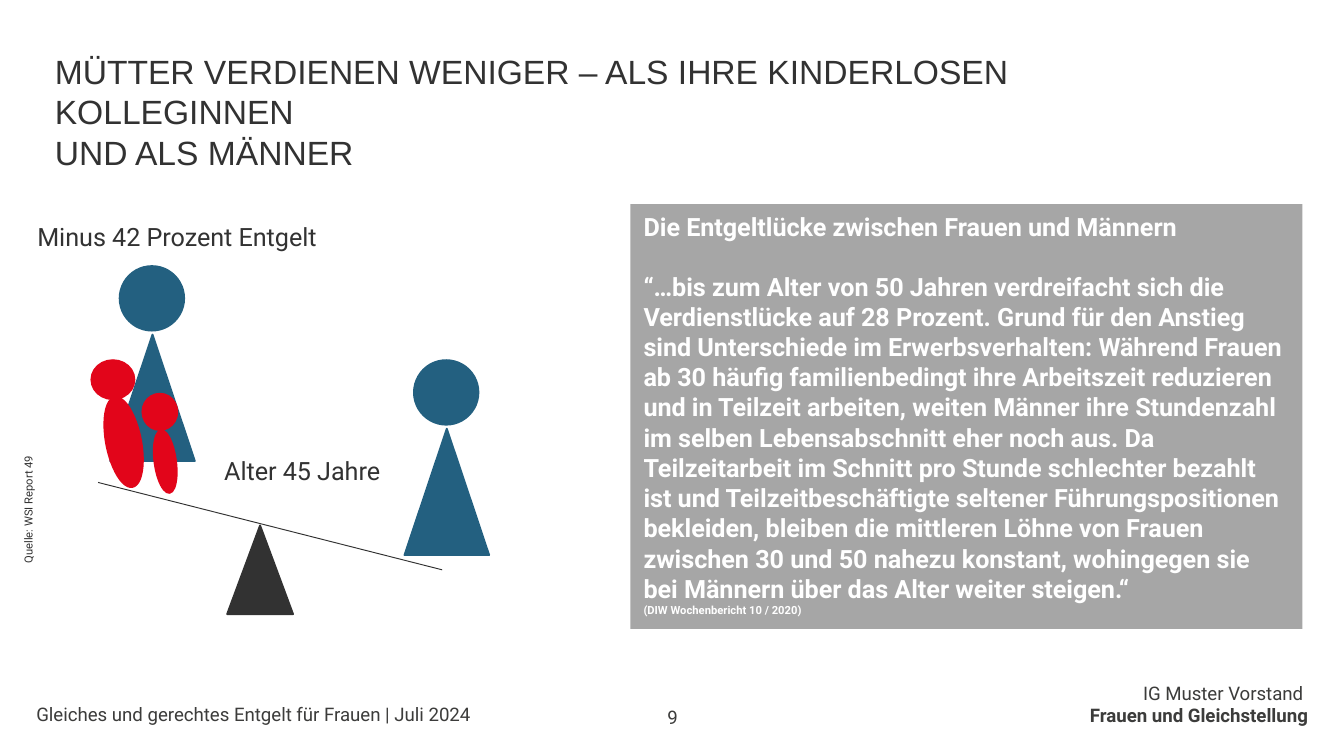
from lxml import etree
from pptx import Presentation
from pptx.dml.color import RGBColor
from pptx.enum.shapes import MSO_CONNECTOR, MSO_SHAPE
from pptx.enum.text import MSO_ANCHOR, PP_ALIGN
from pptx.oxml.ns import qn
from pptx.util import Inches, Pt

RECT, OVAL, CONE = MSO_SHAPE.RECTANGLE, MSO_SHAPE.OVAL, MSO_SHAPE.ISOSCELES_TRIANGLE
STRAIGHT = MSO_CONNECTOR.STRAIGHT
TOP, BOTTOM = MSO_ANCHOR.TOP, MSO_ANCHOR.BOTTOM
LEFT, MID, RIGHT = PP_ALIGN.LEFT, PP_ALIGN.CENTER, PP_ALIGN.RIGHT

WHITE = RGBColor(0xFF, 0xFF, 0xFF)
DARK = RGBColor(0x32, 0x32, 0x32)
FOOT = RGBColor(0x3C, 0x3C, 0x3B)
GREY = RGBColor(0xA6, 0xA6, 0xA6)
BLUE = RGBColor(0x23, 0x60, 0x80)
RED = RGBColor(0xE2, 0x05, 0x1A)

TITLE = ["MÜTTER VERDIENEN WENIGER – ALS IHRE KINDERLOSEN KOLLEGINNEN", "UND ALS MÄNNER"]
HEAD = "Die Entgeltlücke zwischen Frauen und Männern"
QUOTE = (
    "“…bis zum Alter von 50 Jahren verdreifacht sich die Verdienstlücke auf 28 Prozent. "
    "Grund für den Anstieg sind Unterschiede im Erwerbsverhalten: Während Frauen ab 30 "
    "häufig familienbedingt ihre Arbeitszeit reduzieren und in Teilzeit arbeiten, weiten "
    "Männer ihre Stundenzahl im selben Lebensabschnitt eher noch aus. Da Teilzeitarbeit im "
    "Schnitt pro Stunde schlechter bezahlt ist und Teilzeitbeschäftigte seltener "
    "Führungspositionen bekleiden, bleiben die mittleren Löhne von Frauen zwischen 30 und 50 "
    "nahezu konstant, wohingegen sie bei Männern über das Alter weiter steigen.“"
)
CITE = "(DIW Wochenbericht 10 / 2020)"

LABELS = [
    ("Minus 42 Prozent Entgelt", (0.18, 1.6, 2.28, 0.33), 13.5, 0),
    ("Alter 45 Jahre", (1.57, 3.34, 1.56, 0.33), 13.5, 0),
    ("Quelle: WSI Report 49", (-0.35, 3.63, 1.12, 0.2), 6, 270),
]
FOOTERS = [
    (["Gleiches und gerechtes Entgelt für Frauen | Juli 2024"], (0.27, 5.23, 3.89, 0.17), LEFT, BOTTOM),
    (["IG Muster Vorstand ", "Frauen und Gleichstellung"], (6.69, 5.07, 3.04, 0.34), RIGHT, TOP),
    (["9"], (4.52, 5.12, 0.97, 0.3), MID, BOTTOM),
]
ADULTS = [(0.82, 1.98), (3.01, 2.68)]
KIDS = [
    ((1.06, 2.93, 0.26, 0.27), (1.15, 3.2, 0.16, 0.47), 352.2),
    ((0.68, 2.68, 0.32, 0.29), (0.79, 2.95, 0.26, 0.68), 348.8),
]
BEAM = (0.73, 3.59, 3.29, 4.24)
PIVOT = (1.69, 3.91, 0.49, 0.66)


def inch(spot):
    return [Inches(n) for n in spot]


def draw(kind, spot, fill, turn=0):
    shape = slide.shapes.add_shape(kind, *inch(spot))
    shape.shadow.inherit = False
    shape.fill.solid()
    shape.fill.fore_color.rgb = fill
    shape.line.color.rgb = fill
    shape.line.width = Pt(1)
    shape.rotation = turn
    return shape


def write(shape, lines, look, align=LEFT, anchor=TOP, inset=None):
    frame = shape.text_frame
    frame.word_wrap = True
    frame.vertical_anchor = anchor
    if inset is not None:
        for side in ("left", "right", "top", "bottom"):
            setattr(frame, "margin_" + side, inset)
    for i, line in enumerate(lines):
        para = frame.paragraphs[0] if i == 0 else frame.add_paragraph()
        para.alignment = align
        run = para.add_run()
        run.text = line
        style = dict(look)
        run.font.color.rgb = style.pop("color")
        for key, val in style.items():
            setattr(run.font, key, val)
    return frame.paragraphs


def label(spot, *args, turn=0, **more):
    box = slide.shapes.add_textbox(*inch(spot))
    box.rotation = turn
    return write(box, *args, **more)


deck = Presentation()
deck.slide_width, deck.slide_height = Inches(10), Inches(10 * 9 / 16)
slide = deck.slides.add_slide(deck.slide_layouts[6])

foot = dict(name="Roboto", size=Pt(10), color=FOOT)
for lines, spot, align, anchor in FOOTERS:
    paras = label(spot, lines, foot, align=align, anchor=anchor, inset=0)
    for para in paras[1:]:
        para.runs[0].font.bold = True
paras[0].line_spacing = 0.9

panel = draw(RECT, (4.69, 1.52, 5, 3.16), GREY)
panel.line.fill.background()
bold = dict(name="Roboto", size=Pt(13.5), bold=True, color=WHITE)
head, quote, cite = write(panel, [HEAD, QUOTE, CITE], bold)
quote.space_before = Pt(16)
cite.runs[0].font.size = Pt(6)

for left, top in ADULTS:
    draw(OVAL, (left + 0.07, top, 0.48, 0.48), BLUE)
    draw(CONE, (left, top + 0.51, 0.63, 0.94), BLUE)
for face, body, turn in KIDS:
    draw(OVAL, face, RED)
    draw(OVAL, body, RED, turn)

beam = slide.shapes.add_connector(STRAIGHT, *inch(BEAM))
beam.line.color.rgb = DARK
beam.line.width = Pt(0.5)
etree.SubElement(beam._element.spPr, qn("a:effectLst"))
draw(CONE, PIVOT, DARK)

for text, spot, size, turn in LABELS:
    label(spot, [text], dict(name="Roboto", size=Pt(size), color=DARK), turn=turn)

label((0.31, 0.33, 8.61, 0.71), TITLE, dict(name="Arial", size=Pt(18), color=DARK))

deck.save("out.pptx")
